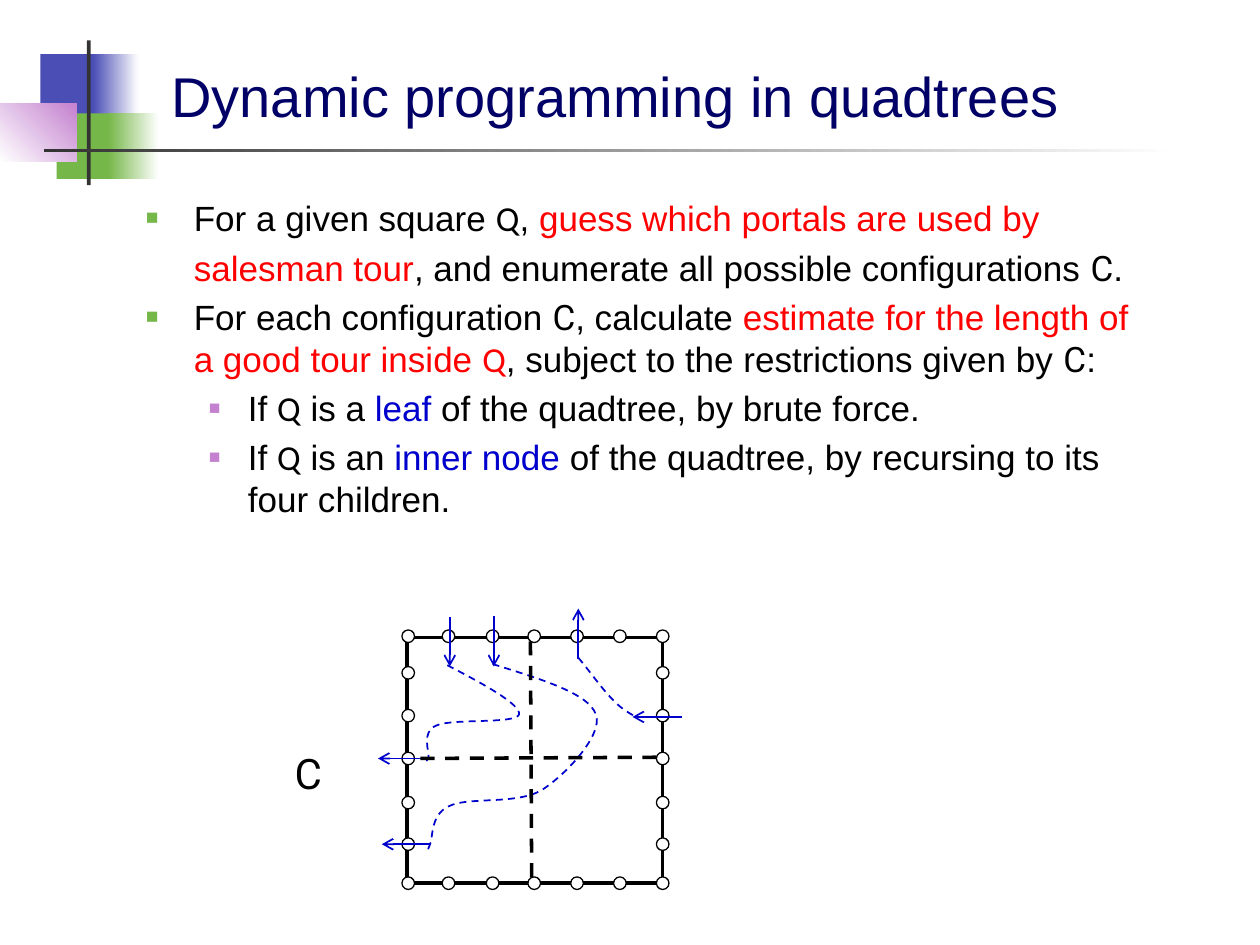
from typing import NamedTuple

from lxml import etree
from pptx import Presentation
from pptx.dml.color import RGBColor
from pptx.enum.dml import MSO_LINE
from pptx.enum.shapes import MSO_CONNECTOR, MSO_SHAPE
from pptx.enum.text import MSO_ANCHOR, MSO_AUTO_SIZE, PP_ALIGN
from pptx.oxml.ns import qn
from pptx.util import Inches, Pt

RECTANGLE, OVAL = MSO_SHAPE.RECTANGLE, MSO_SHAPE.OVAL
STRAIGHT = MSO_CONNECTOR.STRAIGHT
DASH = MSO_LINE.DASH
TITLE_ONLY = 5

BLACK, WHITE, GRAY = "000000", "FFFFFF", "333333"
RED, BLUE, NAVY = "FF0000", "0000CC", "000066"
INDIGO, GREEN, PINK = "4B4EB5", "76B749", "C481CF"


class Block(NamedTuple):
    left: float
    top: float
    width: float
    height: float
    start: str
    end: str = ""
    angle: float = 0


class Words(NamedTuple):
    text: str
    color: str = BLACK
    font: str = "Arial"


class Bullet(NamedTuple):
    words: list[Words]
    level: int = 0
    line_spacing: float = 1.0


class BulletStyle(NamedTuple):
    margin: float
    hanging: float
    color: str
    percent: int


class Segment(NamedTuple):
    x1: float
    y1: float
    x2: float
    y2: float


DECORATION = [
    Block(0.32, 0.43, 0.48, 0.52, INDIGO),
    Block(0.74, 0.43, 0.36, 0.52, INDIGO, WHITE),
    Block(0.45, 0.9, 0.46, 0.52, GREEN),
    Block(0.86, 0.9, 0.4, 0.52, GREEN, WHITE),
    Block(0, 0.82, 0.61, 0.46, WHITE, PINK, 45),
    Block(0.69, 0.32, 0.03, 1.15, GRAY),
    Block(0.35, 1.18, 9, 0.03, GRAY, WHITE),
]

BULLET_STYLES = [BulletStyle(0.38, 0.38, GREEN, 60), BulletStyle(0.81, 0.31, PINK, 55)]
SQUARE_NAME = Words("Q", font="Calibri")
CONFIGURATION = Words("C", font="Roboto")
BULLETS = [
    Bullet([Words("For a given square "), SQUARE_NAME, Words(", "),
            Words("guess which portals are used by salesman tour", RED),
            Words(", and enumerate all possible configurations "),
            CONFIGURATION, Words(".")], line_spacing=1.2),
    Bullet([Words("For each configuration "), CONFIGURATION, Words(", calculate "),
            Words("estimate for the length of a good tour inside ", RED),
            SQUARE_NAME._replace(color=RED),
            Words(", subject to the restrictions given by "), CONFIGURATION, Words(":")]),
    Bullet([Words("If "), SQUARE_NAME, Words(" is a "), Words("leaf", BLUE),
            Words(" of the quadtree, by brute force.")], level=1),
    Bullet([Words("If "), SQUARE_NAME, Words(" is an "), Words("inner node ", BLUE),
            Words("of the quadtree, by recursing to its four children.")], level=1),
]

PORTAL_SIZE = 0.1
PORTAL_COLUMNS = [3.24, 3.56, 3.91, 4.24, 4.58, 4.92, 5.26]
PORTAL_ROWS = [5.05, 5.34, 5.68, 6.02, 6.37, 6.7, 7.01]

CROSSINGS = [
    Segment(3.57, 4.9, 3.57, 5.29), Segment(3.92, 4.89, 3.92, 5.29),
    Segment(4.59, 5.23, 4.59, 4.83), Segment(5.41, 5.69, 5.02, 5.69),
    Segment(3.42, 6.7, 3.03, 6.7), Segment(3.4, 6.02, 3, 6.02),
]
DIVIDERS = [Segment(4.21, 5.09, 4.22, 6.97), Segment(5.21, 6.01, 3.27, 6.02)]

# Each tour is a start point followed by three control points per curve, in hundredths of an inch.
TOURS = [
    [(355, 528), (384, 543), (413, 559), (412, 567),
     (410, 575), (358, 570), (346, 576), (334, 581), (341, 597), (340, 601),
     (338, 605), (339, 604), (339, 602)],
    [(391, 527), (429, 539), (467, 550), (473, 567),
     (479, 583), (449, 615), (430, 627), (410, 639), (371, 632), (356, 640),
     (341, 647), (344, 666), (341, 671), (339, 676), (340, 673), (341, 670)],
    [(459, 522), (469, 534), (478, 547), (486, 555),
     (493, 563), (503, 568), (503, 568)],
]


def rgb(color: str) -> RGBColor:
    return RGBColor.from_string(color)


def format_run(run, size: float, color: str, font: str = "Arial") -> None:
    run.font.size, run.font.name = Pt(size), font
    run.font.color.rgb = rgb(color)


def format_line(line, color: str, width: float, dash=None) -> None:
    line.color.rgb = rgb(color)
    line.width = Pt(width)
    if dash is not None:
        line.dash_style = dash


def add_shape(slide, kind, left: float, top: float, width: float, height: float):
    shape = slide.shapes.add_shape(kind, Inches(left), Inches(top), Inches(width), Inches(height))
    shape.shadow.inherit = False
    return shape


def add_block(slide, block: Block) -> None:
    shape = add_shape(slide, RECTANGLE, block.left, block.top, block.width, block.height)
    shape.line.fill.background()
    if not block.end:
        shape.fill.solid()
        shape.fill.fore_color.rgb = rgb(block.start)
        return
    shape.fill.gradient()
    shape.fill.gradient_angle = block.angle
    for stop, color, position in zip(shape.fill.gradient_stops, (block.start, block.end), (0, 1)):
        stop.color.rgb = rgb(color)
        stop.position = position


def add_bullet(paragraph, bullet: Bullet) -> None:
    style = BULLET_STYLES[bullet.level]
    paragraph.level = bullet.level
    paragraph.space_before = Pt(4)
    paragraph.line_spacing = bullet.line_spacing
    properties = paragraph._p.get_or_add_pPr()
    properties.set("marL", str(Inches(style.margin)))
    properties.set("indent", str(-Inches(style.hanging)))
    bullet_color = etree.SubElement(properties, qn("a:buClr"))
    etree.SubElement(bullet_color, qn("a:srgbClr"), val=style.color)
    etree.SubElement(properties, qn("a:buSzPct"), val=str(style.percent * 1000))
    etree.SubElement(properties, qn("a:buFont"), typeface="Arial")
    etree.SubElement(properties, qn("a:buChar"), char="■")
    for words in bullet.words:
        run = paragraph.add_run()
        run.text = words.text
        format_run(run, 20, words.color, words.font)


def add_portal(slide, x: float, y: float) -> None:
    portal = add_shape(slide, OVAL, x - PORTAL_SIZE / 2, y - PORTAL_SIZE / 2, PORTAL_SIZE, PORTAL_SIZE)
    portal.fill.solid()
    portal.fill.fore_color.rgb = rgb(WHITE)
    format_line(portal.line, BLACK, 0.75)


def add_segment(slide, segment: Segment, color: str, width: float, dash=None, arrow=False) -> None:
    connector = slide.shapes.add_connector(STRAIGHT, *(Inches(value) for value in segment))
    format_line(connector.line, color, width, dash)
    if arrow:
        etree.SubElement(connector.line._get_or_add_ln(), qn("a:tailEnd"), type="arrow")
    etree.SubElement(connector._element.spPr, qn("a:effectLst"))


def add_tour(slide, points: list[tuple[int, int]]) -> None:
    """Draw the control points as a freeform, then turn each three lines into a curve."""
    builder = slide.shapes.build_freeform(*points[0], scale=Inches(0.01))
    builder.add_line_segments(points[1:], close=False)
    tour = builder.convert_to_shape()
    tour.shadow.inherit = False
    tour.fill.background()
    format_line(tour.line, BLUE, 1, DASH)
    lines = list(tour._element.iter(qn("a:lnTo")))
    outline = lines[0].getparent()
    for first in range(0, len(lines), 3):
        curve = etree.SubElement(outline, qn("a:cubicBezTo"))
        for line in lines[first:first + 3]:
            curve.append(line[0])
            outline.remove(line)


def main() -> None:
    presentation = Presentation()
    presentation.slide_width, presentation.slide_height = Inches(10), Inches(7.5)
    slide = presentation.slides.add_slide(presentation.slide_layouts[TITLE_ONLY])
    for block in DECORATION:
        add_block(slide, block)

    title = slide.shapes.title
    title.left, title.top, title.width, title.height = map(Inches, (1.26, 0.23, 8.52, 0.84))
    title.text_frame.text = "Dynamic programming in quadtrees"
    title.text_frame.auto_size = MSO_AUTO_SIZE.NONE
    title.text_frame.vertical_anchor = MSO_ANCHOR.BOTTOM
    title.text_frame.paragraphs[0].alignment = PP_ALIGN.LEFT
    format_run(title.text_frame.paragraphs[0].runs[0], 32, NAVY)

    body = slide.shapes.add_textbox(*map(Inches, (1.06, 1.44, 8.11, 5.32))).text_frame
    body.word_wrap = True
    for index, bullet in enumerate(BULLETS):
        add_bullet(body.add_paragraph() if index else body.paragraphs[0], bullet)

    square = add_shape(slide, RECTANGLE, 3.23, 5.06, 2.03, 1.95)
    square.fill.background()
    format_line(square.line, BLACK, 2)
    for x in PORTAL_COLUMNS:
        for y in PORTAL_ROWS:
            if x in (PORTAL_COLUMNS[0], PORTAL_COLUMNS[-1]) or y in (PORTAL_ROWS[0], PORTAL_ROWS[-1]):
                add_portal(slide, x, y)
    for crossing in CROSSINGS:
        add_segment(slide, crossing, BLUE, 1, arrow=True)
    for tour in TOURS:
        add_tour(slide, tour)

    label = slide.shapes.add_textbox(*map(Inches, (2.24, 5.88, 0.39, 0.5))).text_frame
    label.text = "C"
    format_run(label.paragraphs[0].runs[0], 24, BLACK, "Roboto")
    for divider in DIVIDERS:
        add_segment(slide, divider, BLACK, 2, DASH)
    presentation.save("out.pptx")


if __name__ == "__main__":
    main()
